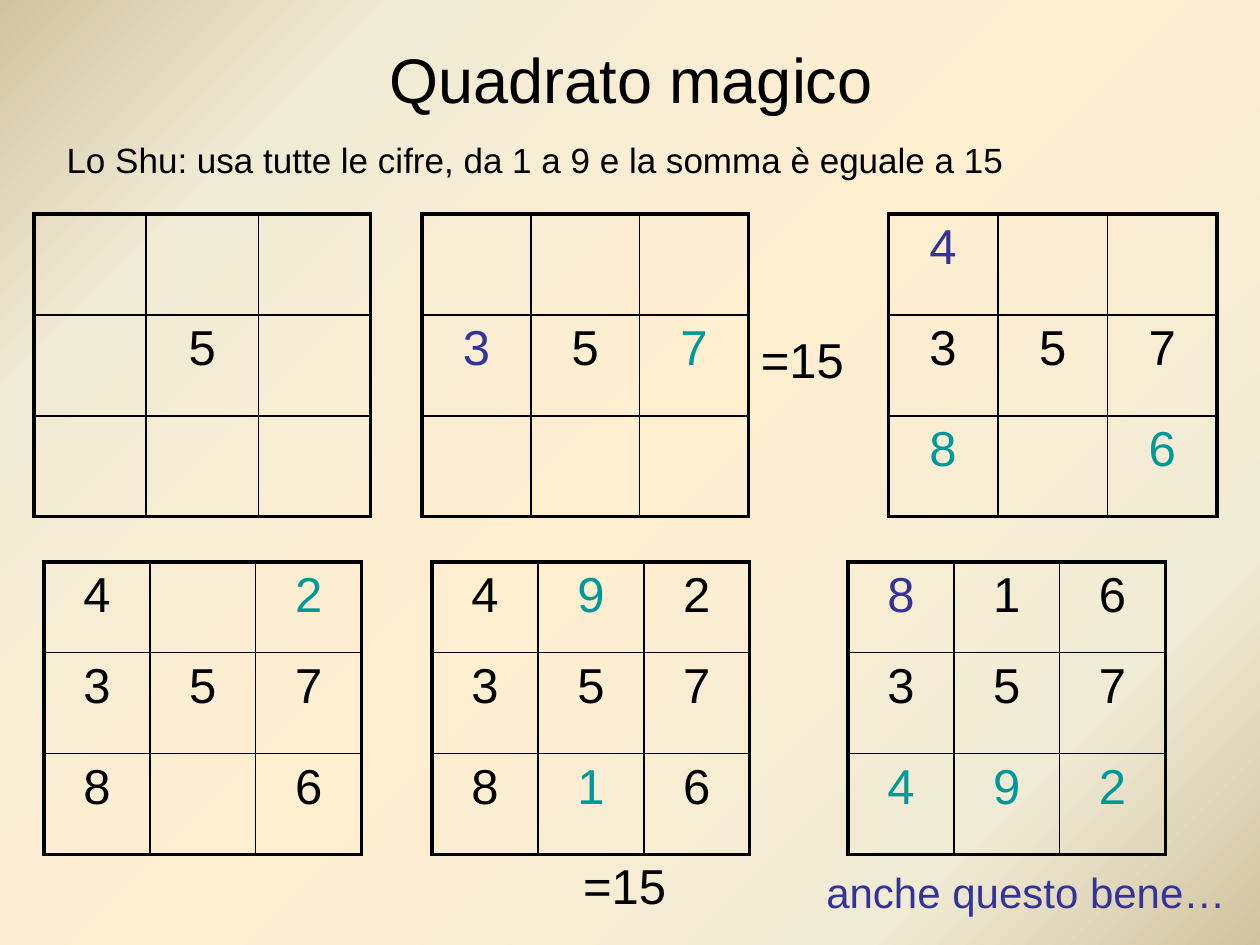
from lxml.etree import SubElement
from pptx import Presentation
from pptx.dml.color import RGBColor
from pptx.enum.text import MSO_ANCHOR, MSO_AUTO_SIZE, PP_ALIGN
from pptx.oxml.ns import qn
from pptx.util import Inches, Pt

COLORS = {"ink": "000000", "blue": "333399", "teal": "009999"}
BACK = [(0, "D1C39F"), (18, "F0EBD5"), (50, "FFEFD1"), (82, "F0EBD5"), (100, "D1C39F")]
FONT = "Arial"
THICK, THIN = 2.25, 1

# text, left, top, width, height, size, color
TITLE = ("Quadrato magico", 0.51, 0, 9, 1.25, 36, "ink")
NOTES = [
    ("=15", 5.94, 2.57, 0.86, 0.57, 28, "ink"),
    ("anche questo bene…", 6.46, 6.83, 3.4, 0.5, 24, "blue"),
    ("=15", 4.53, 6.74, 0.86, 0.57, 28, "ink"),
    ("Lo Shu: usa tutte le cifre, da 1 a 9 e la somma è eguale a 15",
     0.43, 1.05, 7.97, 0.44, 20, "ink"),
]

# Each band: top, row heights, squares as (left, width, digits, blue digits, teal digits)
BANDS = [
    (1.7, (0.8, 0.8, 0.8), [
        (0.27, 2.67, ("   ", " 5 ", "   "), "", ""),
        (3.35, 2.59, ("   ", "357", "   "), "3", "7"),
        (7.05, 2.61, ("4  ", "357", "8 6"), "4", "86"),
    ]),
    (4.46, (0.72, 0.8, 0.8), [
        (0.35, 2.52, ("4 2", "357", "8 6"), "", "2"),
        (3.43, 2.52, ("492", "357", "816"), "", "91"),
        (6.73, 2.52, ("816", "357", "492"), "8", "492"),
    ]),
]


def style(para, size, color):
    para.font.name = FONT
    para.font.size = Pt(size)
    para.font.color.rgb = RGBColor.from_string(COLORS[color])


def paint(slide):
    """Fill the background with the diagonal gradient."""
    fill = slide.background.fill
    fill.gradient()
    grad = slide.element.find(".//" + qn("a:gradFill"))
    stops = grad.find(qn("a:gsLst"))
    for stop in list(stops):
        stops.remove(stop)
    for pos, color in BACK:
        stop = SubElement(stops, qn("a:gs"), pos=str(pos * 1000))
        SubElement(stop, qn("a:srgbClr"), val=color)
    grad.find(qn("a:lin")).set("ang", str(45 * 60000))


def write(slide, text, left, top, width, height, size, color):
    box = slide.shapes.add_textbox(*map(Inches, (left, top, width, height)))
    frame = box.text_frame
    frame.word_wrap = False
    frame.auto_size = MSO_AUTO_SIZE.SHAPE_TO_FIT_TEXT
    frame.text = text
    style(frame.paragraphs[0], size, color)
    return frame


def edge(cell, row, col):
    """Draw thick lines on the outside of the square, thin ones inside."""
    outer = {"lnL": col == 0, "lnR": col == 2, "lnT": row == 0, "lnB": row == 2}
    props = cell._tc.get_or_add_tcPr()
    for tag, thick in outer.items():
        width = Pt(THICK if thick else THIN)
        line = SubElement(props, qn("a:" + tag), w=str(width))
        solid = SubElement(line, qn("a:solidFill"))
        SubElement(solid, qn("a:srgbClr"), val=COLORS["ink"])


def square(slide, top, heights, left, width, digits, blue, teal):
    area = map(Inches, (left, top, width, sum(heights)))
    table = slide.shapes.add_table(3, 3, *area).table
    table.first_row = table.horz_banding = False
    for n in range(3):
        table.columns[n].width = Inches(width / 3)
        table.rows[n].height = Inches(heights[n])
    for row, line in enumerate(digits):
        for col, digit in enumerate(line):
            cell = table.cell(row, col)
            edge(cell, row, col)
            cell.fill.background()
            cell.text = digit.strip()
            para = cell.text_frame.paragraphs[0]
            para.alignment = PP_ALIGN.CENTER
            color = "blue" if digit in blue else "teal" if digit in teal else "ink"
            style(para, 28, color)


def main():
    deck = Presentation()
    deck.slide_width, deck.slide_height = Inches(10), Inches(7.5)
    slide = deck.slides.add_slide(deck.slide_layouts[6])
    paint(slide)

    title = write(slide, *TITLE)
    title.word_wrap = True
    title.auto_size = MSO_AUTO_SIZE.NONE
    title.vertical_anchor = MSO_ANCHOR.MIDDLE
    title.paragraphs[0].alignment = PP_ALIGN.CENTER

    for top, heights, squares in BANDS:
        for item in squares:
            square(slide, top, heights, *item)
    for note in NOTES:
        write(slide, *note)
    deck.save("out.pptx")


if __name__ == "__main__":
    main()
